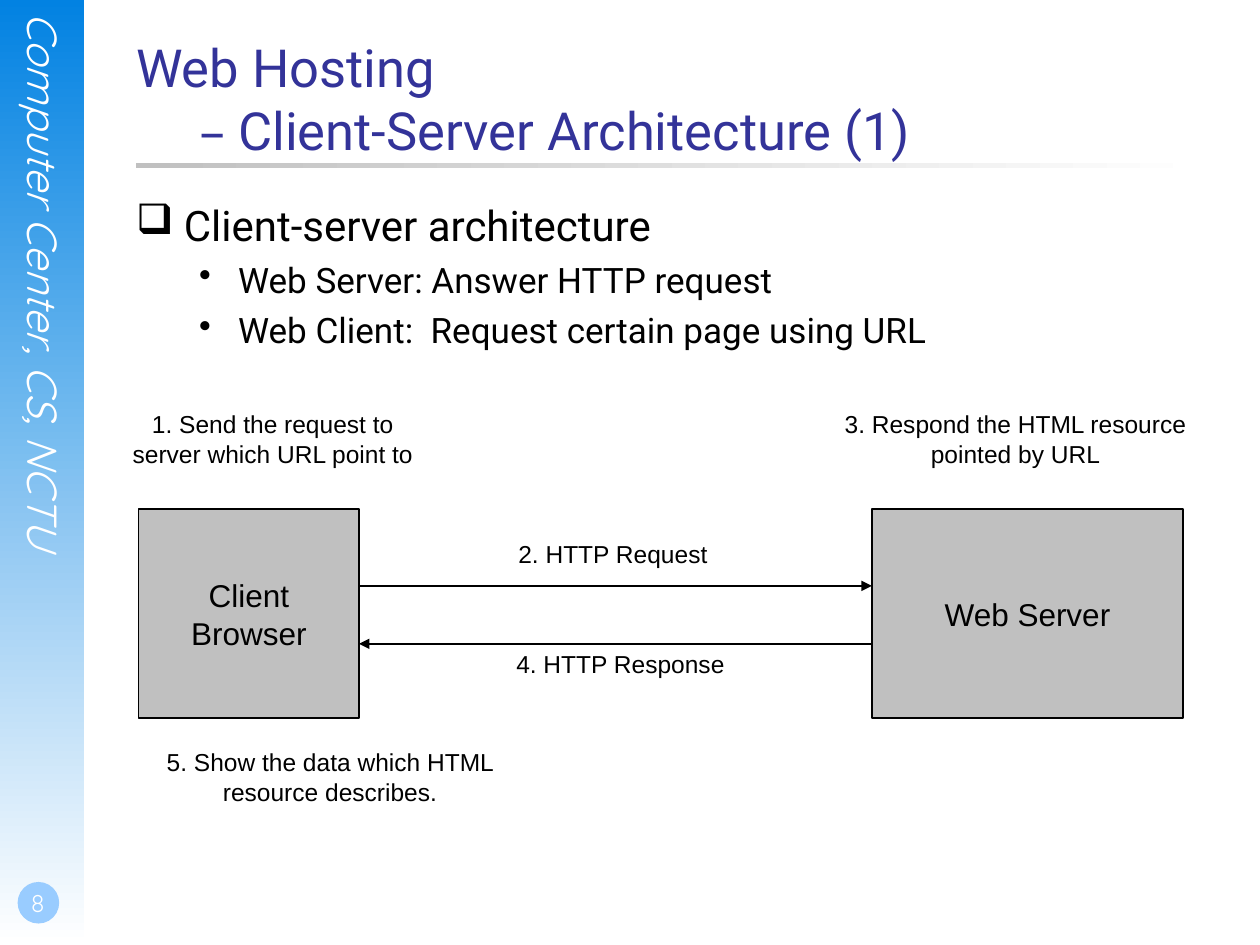
from dataclasses import dataclass

from pptx import Presentation
from pptx.dml.color import RGBColor
from pptx.enum.shapes import MSO_CONNECTOR, MSO_SHAPE
from pptx.enum.text import MSO_ANCHOR, PP_ALIGN
from pptx.oxml.ns import qn
from pptx.util import Inches, Pt

# The page is a grid of one-inch cells
COLUMNS, ROWS = 10, 7.5
BLACK, WHITE, GREY = "000000", "FFFFFF", "C0C0C0"
CONTENT_LEFT, CONTENT_WIDTH = 1.08, 8.5


@dataclass
class Box:
    left: float
    top: float
    width: float
    height: float

    def inner(self, across, down, width, height):
        return Box(self.left + across, self.top + down, width, height)

    def lengths(self):
        return [Inches(n) for n in (self.left, self.top, self.width, self.height)]


def color(hex_text):
    return RGBColor.from_string(hex_text)


def set_font(font, name, size, hex_text):
    font.name, font.size = name, Pt(size)
    font.color.rgb = color(hex_text)


def add_panel(page, box, fill, kind=MSO_SHAPE.RECTANGLE):
    panel = page.shapes.add_shape(kind, *box.lengths())
    panel.shadow.inherit = False
    panel.line.fill.background()
    panel.fill.solid()
    panel.fill.fore_color.rgb = color(fill)
    return panel


def add_fade(page, box, start, angle):
    fill = add_panel(page, box, start).fill
    fill.gradient()
    fill.gradient_angle = angle
    for stop, shade in zip(fill.gradient_stops, (start, WHITE)):
        stop.color.rgb = color(shade)


def add_text_frame(page, box):
    frame = page.shapes.add_textbox(*box.lengths()).text_frame
    frame.word_wrap = True
    frame.margin_left = frame.margin_right = 0
    frame.margin_top = frame.margin_bottom = 0
    return frame


def add_label(page, box, text, name="Arial", size=14, shade=BLACK,
              align=PP_ALIGN.CENTER):
    frame = add_text_frame(page, box)
    para = frame.paragraphs[0]
    para.text, para.alignment = text, align
    set_font(para.font, name, size, shade)
    return frame


def add_sidebar(page, box):
    add_fade(page, box, "0282E2", 270)
    # Vertical name of the course
    frame = add_label(page, box.inner(0.15, 0.1, 0.4, 5.11), "Computer Center, CS, NCTU",
                      "Quicksand", 24, WHITE, PP_ALIGN.LEFT)
    frame.paragraphs[0].font.italic = True
    frame._txBody.bodyPr.set("vert", "eaVert")
    # Page number
    add_panel(page, box.inner(0.14, 7, 0.33, 0.33), "99CCFF", MSO_SHAPE.OVAL)
    number = add_label(page, box.inner(0, 6.83, 0.58, 0.5), "8", "Quicksand", 14, WHITE)
    number.vertical_anchor = MSO_ANCHOR.BOTTOM
    number.margin_left, number.margin_bottom = Inches(0.02), Inches(0.05)


def add_title(page, box):
    add_fade(page, box.inner(0, 1.01, box.width, 0.04), GREY, 0)
    para = add_text_frame(page, box).paragraphs[0]
    set_font(para.font, "Roboto", 30, "333399")
    para.add_run().text = "Web Hosting"
    para.add_line_break()
    para.add_run().text = "\t"
    dash = para.add_run()
    dash.text, dash.font.name = "–", "DejaVu Sans"
    para.add_run().text = " Client-Server Architecture (1)"


def add_bullets(page, box):
    frame = add_text_frame(page, box)
    # Bullet, size, left margin and hanging indent of each level
    levels = (("❑", 24, 0.38, 0.38), ("•", 20, 0.81, 0.31))
    lines = ((0, "Client-server architecture"),
             (1, "Web Server: Answer HTTP request"),
             (1, "Web Client:  Request certain page using URL"))
    for index, (level, text) in enumerate(lines):
        para = frame.add_paragraph() if index else frame.paragraphs[0]
        bullet, size, margin, hanging = levels[level]
        para.text, para.level = text, level
        para.space_before = Pt(size / 4)
        set_font(para.font, "Roboto", size, BLACK)
        properties = para._p.get_or_add_pPr()
        properties.set("marL", str(Inches(margin)))
        properties.set("indent", str(-Inches(hanging)))
        mark = properties.makeelement(qn("a:buChar"), {"char": bullet})
        properties.insert_element_before(mark, "a:tabLst", "a:defRPr", "a:extLst")


def add_node(page, box, lines):
    node = add_panel(page, box, GREY)
    node.line.color.rgb = color(BLACK)
    node.line.width = Pt(0.75)
    frame = node.text_frame
    frame.word_wrap = False
    frame.vertical_anchor = MSO_ANCHOR.MIDDLE
    frame.text = lines
    for para in frame.paragraphs:
        para.alignment = PP_ALIGN.CENTER
        set_font(para.font, "Arial", 18, BLACK)


def add_arrow(page, start, end, row):
    arrow = page.shapes.add_connector(
        MSO_CONNECTOR.STRAIGHT, Inches(start), Inches(row), Inches(end), Inches(row))
    arrow.line.color.rgb = color(BLACK)
    arrow.line.width = Pt(1.5)
    line = arrow.line._get_or_add_ln()
    line.append(line.makeelement(qn("a:tailEnd"), {"type": "triangle"}))
    properties = arrow._element.spPr
    properties.append(properties.makeelement(qn("a:effectLst"), {}))


def add_diagram(page, box):
    # Client and server
    client = box.inner(0, 0.79, 1.75, 1.66)
    server = box.inner(5.82, 0.79, 2.47, 1.66)
    add_node(page, client, "Client\nBrowser")
    add_node(page, server, "Web Server")
    # Request and response
    client_edge, server_edge = client.left + client.width, server.left
    add_arrow(page, client_edge, server_edge, box.top + 1.4)
    add_arrow(page, server_edge, client_edge, box.top + 1.86)
    # Numbered steps
    steps = (
        ((-0.18, 0, 2.49, 0.66), "1. Send the request to server which URL point to"),
        ((2.31, 1.03, 2.91, 0.33), "2. HTTP Request"),
        ((5.44, 0, 3.04, 0.66), "3. Respond the HTML resource pointed by URL"),
        ((2.21, 1.9, 3.23, 0.33), "4. HTTP Response"),
        ((0, 2.68, 3.04, 0.66), "5. Show the data which HTML resource describes."),
    )
    for place, text in steps:
        add_label(page, box.inner(*place), text)


def main():
    deck = Presentation()
    deck.slide_width, deck.slide_height = Inches(COLUMNS), Inches(ROWS)
    page = deck.slides.add_slide(deck.slide_layouts[6])
    add_sidebar(page, Box(0, 0, 0.67, ROWS))
    add_title(page, Box(CONTENT_LEFT, 0.28, CONTENT_WIDTH, 1.25))
    add_bullets(page, Box(CONTENT_LEFT, 1.58, CONTENT_WIDTH, 1.5))
    add_diagram(page, Box(1.1, 3.25, 8.29, 3.34))
    deck.save("out.pptx")


if __name__ == "__main__":
    main()
